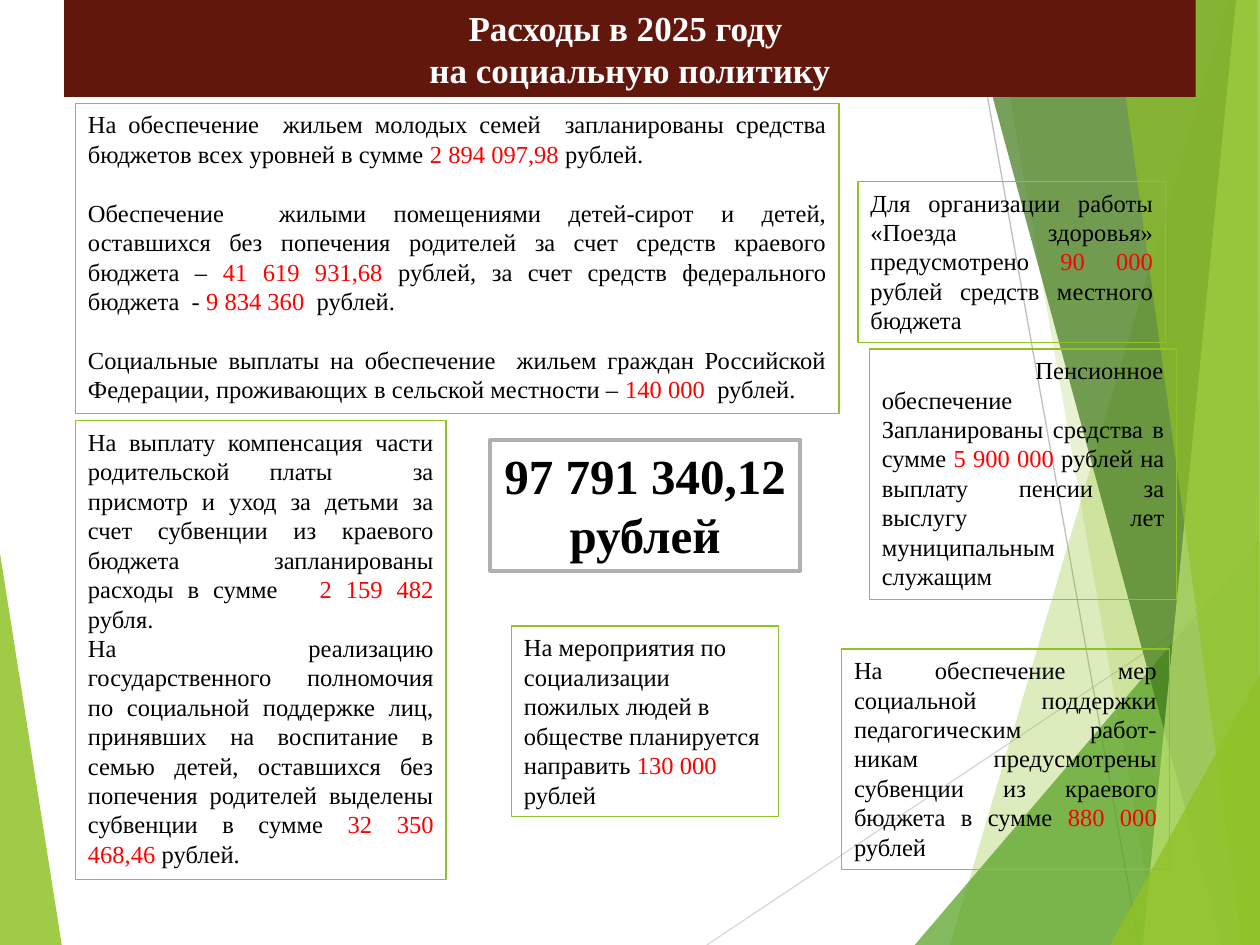
import pptx
import pptx.dml.color
import pptx.enum.shapes
import pptx.enum.text
import pptx.oxml.ns
import pptx.util
from lxml import etree

Inches = pptx.util.Inches
Pt = pptx.util.Pt
RGBColor = pptx.dml.color.RGBColor
Align = pptx.enum.text.PP_ALIGN
AutoSize = pptx.enum.text.MSO_AUTO_SIZE
qn = pptx.oxml.ns.qn

WHITE = RGBColor(0xFF, 0xFF, 0xFF)
BLACK = RGBColor(0, 0, 0)
RED = RGBColor(0xFF, 0, 0)
MAROON = RGBColor(0x62, 0x17, 0x0D)
GREEN = RGBColor(0x90, 0xC2, 0x26)
MID_GREEN = RGBColor(0x54, 0xA0, 0x21)
DARK_GREEN = RGBColor(0x3F, 0x78, 0x19)
PALE_GREEN = RGBColor(0xC0, 0xE4, 0x74)
FRAME_GRAY = RGBColor(0xB0, 0xB0, 0xB0)
RAY_GRAY = RGBColor(0xBF, 0xBF, 0xBF)
LIGHT_GRAY = RGBColor(0xD9, 0xD9, 0xD9)


def write_text(frame, paragraphs, size=14, color=BLACK, bold=False,
               align=Align.JUSTIFY, gap=0, indent=0):
    """Fill a frame; parts between | marks are amounts shown in red."""
    for number, text in enumerate(paragraphs):
        paragraph = frame.paragraphs[0] if number == 0 else frame.add_paragraph()
        paragraph.alignment = align
        if number:
            paragraph.space_before = Pt(gap)
        elif indent:
            paragraph._p.get_or_add_pPr().set("indent", str(Inches(indent)))
        for position, part in enumerate(text.split("|")):
            if not part:
                continue
            run = paragraph.add_run()
            run.text = part
            run.font.name = "Times New Roman"
            run.font.size = Pt(size)
            run.font.bold = bold
            run.font.color.rgb = RED if position % 2 else color


class BudgetSlide:
    def __init__(self, presentation):
        self.slide = presentation.slides.add_slide(presentation.slide_layouts[5])
        self.shapes = self.slide.shapes

    def facet(self, points, color, opacity):
        """Draw a translucent polygon of the backdrop."""
        corners = [(Inches(x), Inches(y)) for x, y in points]
        builder = self.shapes.build_freeform(*corners[0])
        builder.add_line_segments(corners[1:], close=True)
        shape = builder.convert_to_shape()
        shape.shadow.inherit = False
        shape.line.fill.background()
        shape.fill.solid()
        shape.fill.fore_color.rgb = color
        tint = shape._element.spPr.find(".//" + qn("a:srgbClr"))
        etree.SubElement(tint, qn("a:alpha")).set("val", str(opacity * 1000))

    def ray(self, start, end, color):
        line = self.shapes.add_connector(
            pptx.enum.shapes.MSO_CONNECTOR.STRAIGHT,
            *(Inches(value) for value in start + end))
        line.line.color.rgb = color
        line.line.width = Pt(0.75)
        etree.SubElement(line._element.spPr, qn("a:effectLst"))

    def banner(self, bounds, lines):
        title = self.shapes.title
        self.shapes._spTree.append(title._element)  # above the backdrop
        title.left, title.top, title.width, title.height = map(Inches, bounds)
        title.fill.solid()
        title.fill.fore_color.rgb = MAROON
        title.text_frame.auto_size = AutoSize.NONE
        write_text(title.text_frame, lines, size=20, color=WHITE, bold=True,
                   align=Align.CENTER)

    def box(self, bounds, paragraphs, fill=None, line=GREEN, width=0.75,
            wrap=True, **style):
        box = self.shapes.add_textbox(*map(Inches, bounds))
        if fill is not None:
            box.fill.solid()
            box.fill.fore_color.rgb = fill
        box.line.color.rgb = line
        box.line.width = Pt(width)
        box.text_frame.word_wrap = wrap
        box.text_frame.auto_size = AutoSize.SHAPE_TO_FIT_TEXT
        write_text(box.text_frame, paragraphs, **style)


def draw_backdrop(page):
    page.facet([(0, 4.39), (0.49, 7.5), (0, 7.5)], GREEN, 85)
    page.ray((5.61, 7.5), (10, 4.57), LIGHT_GRAY)
    page.ray((7.7, 0), (9.04, 7.5), RAY_GRAY)
    for points, color, opacity in [
        ([(9.75, 0), (7.54, 7.5), (10, 7.5), (10, 0)], GREEN, 30),
        ([(7.88, 0), (9.19, 7.5), (10, 7.5), (10, 0)], GREEN, 20),
        ([(7.26, 7.5), (10, 4.29), (10, 7.5)], MID_GREEN, 72),
        ([(7.67, 0), (9.7, 7.5), (10, 7.5), (10, 0)], DARK_GREEN, 70),
        ([(9.81, 0), (9.07, 7.5), (10, 7.5), (10, 0)], PALE_GREEN, 70),
        ([(8.83, 0), (9.86, 7.5), (10, 7.5), (9.98, 0)], GREEN, 65),
        ([(8.81, 7.5), (10, 5.35), (10, 7.5)], GREEN, 80),
    ]:
        page.facet(points, color, opacity)


def main():
    presentation = pptx.Presentation()
    presentation.slide_width = Inches(10)
    presentation.slide_height = Inches(7.5)
    page = BudgetSlide(presentation)
    draw_backdrop(page)

    page.banner((0.51, 0, 8.98, 0.77),
                ["Расходы в 2025 году ", "на социальную политику"])
    page.box((3.89, 3.49, 2.46, 1.04), ["97 791 340,12", "рублей"],
             fill=WHITE, line=FRAME_GRAY, width=2.25, wrap=False,
             size=28, bold=True, align=Align.CENTER)
    page.box((6.9, 2.77, 2.44, 1.99), [
        "Пенсионное обеспечение",
        "Запланированы средства в сумме |5 900 000 |рублей на выплату пенсии "
        "за выслугу лет муниципальным служащим",
    ], indent=1.22)
    page.box((6.81, 1.44, 2.44, 1.28), [
        "Для организации работы «Поезда здоровья» предусмотрено |90 000 |"
        "рублей средств местного бюджета",
    ])
    page.box((6.68, 5.15, 2.6, 1.75), [
        "На обеспечение мер социальной поддержки педагогическим работ-никам "
        "предусмотрены субвенции из краевого бюджета в сумме |880 000 |рублей",
    ])
    page.box((0.6, 0.82, 6.06, 2.46), [
        "На обеспечение  жильем молодых семей  запланированы средства "
        "бюджетов всех уровней в сумме |2 894 097,98 |рублей.",
        "Обеспечение  жилыми помещениями детей-сирот и детей, оставшихся без "
        "попечения родителей за счет средств краевого бюджета – "
        "|41 619 931,68 |рублей, за счет средств федерального бюджета  - "
        "|9 834 360  |рублей.",
        "Социальные выплаты на обеспечение  жильем граждан Российской "
        "Федерации, проживающих в сельской местности – |140 000  |рублей.",
    ], gap=16.8)
    page.box((0.6, 3.34, 2.94, 3.64), [
        "На выплату компенсация части родительской платы  за присмотр и уход "
        "за детьми за счет субвенции из краевого бюджета запланированы "
        "расходы в сумме   |2 159 482 |рубля. ",
        "На реализацию государственного полномочия по социальной поддержке "
        "лиц, принявших на воспитание в семью детей, оставшихся без попечения "
        "родителей выделены субвенции в сумме |32 350 468,46 |рублей.",
    ])
    page.box((4.06, 4.97, 2.12, 1.51), [
        "На мероприятия по социализации пожилых людей в обществе планируется "
        "направить |130 000 |рублей",
    ], width=1, align=Align.LEFT)

    presentation.save("out.pptx")


if __name__ == "__main__":
    main()
